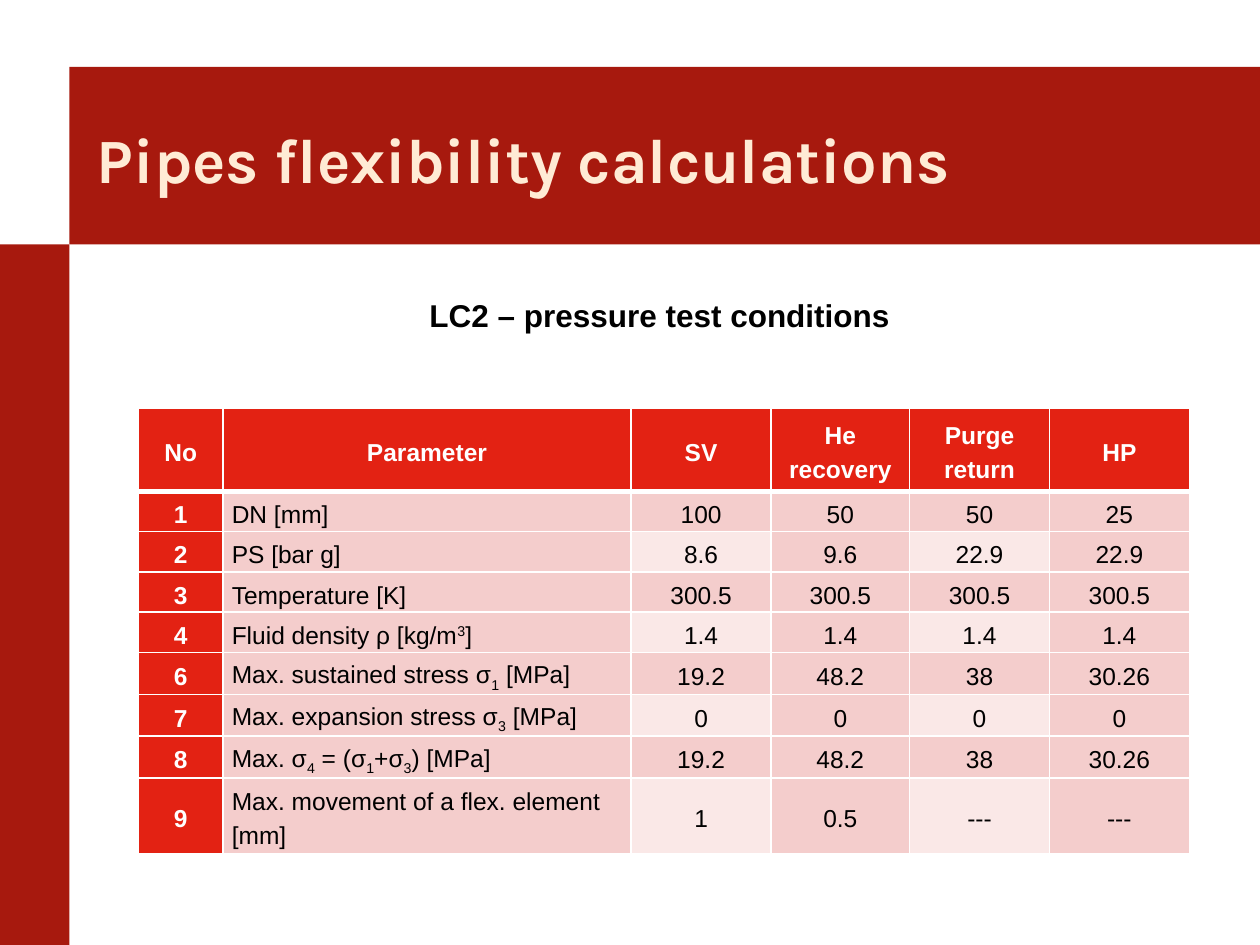
from lxml.etree import SubElement
from pptx import Presentation
from pptx.dml.color import RGBColor
from pptx.enum.shapes import MSO_SHAPE as Shape
from pptx.enum.text import MSO_ANCHOR as Anchor, MSO_AUTO_SIZE as AutoSize, PP_ALIGN as Align
from pptx.oxml.ns import qn
from pptx.util import Inches, Pt

DARK_RED, RED, CREAM = "A7190E", "E32213", "FFEBD5"
PINK, PALE_PINK = "F4CDCC", "FAE8E7"
WHITE, BLACK = "FFFFFF", "000000"
COLUMNS = [0.67, 3.24, 1.11, 1.1, 1.11, 1.11]
ROWS = [0.66] + [0.32] * 7 + [0.6]
SCRIPT_OFFSETS = {"^": "30000", "_": "-25000"}

# Between bars, ^ marks a superscript and _ a subscript.
CONTENT = [
    ["No", "Parameter", "SV", "He recovery", "Purge return", "HP"],
    ["1", "DN [mm]", "100", "50", "50", "25"],
    ["2", "PS [bar g]", "8.6", "9.6", "22.9", "22.9"],
    ["3", "Temperature [K]", "300.5", "300.5", "300.5", "300.5"],
    ["4", "Fluid density ρ [kg/m|^3|]", "1.4", "1.4", "1.4", "1.4"],
    ["6", "Max. sustained stress σ|_1| [MPa]", "19.2", "48.2", "38", "30.26"],
    ["7", "Max. expansion stress σ|_3| [MPa]", "0", "0", "0", "0"],
    ["8", "Max. σ|_4| = (σ|_1|+σ|_3|) [MPa]", "19.2", "48.2", "38", "30.26"],
    ["9", "Max. movement of a flex. element [mm]", "1", "0.5", "---", "---"],
]


def color(hex_text):
    return RGBColor.from_string(hex_text)


def write(para, text, font, size, hex_text, bold):
    """Add text to a paragraph, raising or lowering the marked pieces."""
    for index, piece in enumerate(text.split("|")):
        span = para.add_run()
        if index % 2:
            span.text = piece[1:]
            span.font._element.set("baseline", SCRIPT_OFFSETS[piece[0]])
        else:
            span.text = piece
    para.font.name, para.font.size, para.font.bold = font, Pt(size), bold
    para.font.color.rgb = color(hex_text)


deck = Presentation()
deck.slide_width, deck.slide_height = Inches(10), Inches(7.5)
page = deck.slides.add_slide(deck.slide_layouts[6])

# Title band and side band meet at one corner
corner_x, corner_y, band_top = 0.55, 1.94, 0.53
bands = [
    (corner_x, band_top, 10 - corner_x, corner_y - band_top),
    (0, corner_y, corner_x, 7.5 - corner_y),
]
for area in bands:
    band = page.shapes.add_shape(Shape.RECTANGLE, *map(Inches, area))
    band.shadow.inherit = False
    band.fill.solid()
    band.fill.fore_color.rgb = color(DARK_RED)
    band.line.fill.background()

title = page.shapes.add_textbox(*map(Inches, (0.67, 0.69, 9.21, 1.13))).text_frame
title.word_wrap = True
title.vertical_anchor = Anchor.MIDDLE
write(title.paragraphs[0], "Pipes flexibility calculations", "Karla", 36, CREAM, True)

heading = page.shapes.add_textbox(*map(Inches, (3.31, 2.3, 4.03, 0.4))).text_frame
heading.word_wrap = False
heading.auto_size = AutoSize.SHAPE_TO_FIT_TEXT
write(heading.paragraphs[0], "LC2 – pressure test conditions", "Arial", 18, BLACK, True)

# Results table
table = page.shapes.add_table(
    len(ROWS), len(COLUMNS), Inches(1.1), Inches(3.24),
    Inches(sum(COLUMNS)), Inches(sum(ROWS))).table
for column, width in zip(table.columns, COLUMNS):
    column.width = Inches(width)
for row, height in zip(table.rows, ROWS):
    row.height = Inches(height)

for r, values in enumerate(CONTENT):
    for c, value in enumerate(values):
        cell = table.cell(r, c)
        header = r == 0 or c == 0
        cell.vertical_anchor = Anchor.MIDDLE
        cell.margin_left = cell.margin_right = Inches(0.07)
        cell.margin_top = cell.margin_bottom = 0

        para = cell.text_frame.paragraphs[0]
        para.alignment = Align.LEFT if c == 1 and r > 0 else Align.CENTER
        para.line_spacing = 1.25
        write(para, value, "Arial", 14, WHITE if header else BLACK, header)

        for side in "LRTB":
            thick = (r == 0 and side == "B") or (r == 1 and side == "T")
            border = SubElement(cell._tc.get_or_add_tcPr(), qn(f"a:ln{side}"),
                                w=str(Pt(3 if thick else 1)))
            paint = SubElement(border, qn("a:solidFill"))
            SubElement(paint, qn("a:srgbClr"), val=WHITE)

        pale = r % 2 == 0 and c in (2, 4)
        cell.fill.solid()
        cell.fill.fore_color.rgb = color(RED if header else PALE_PINK if pale else PINK)

deck.save("out.pptx")
